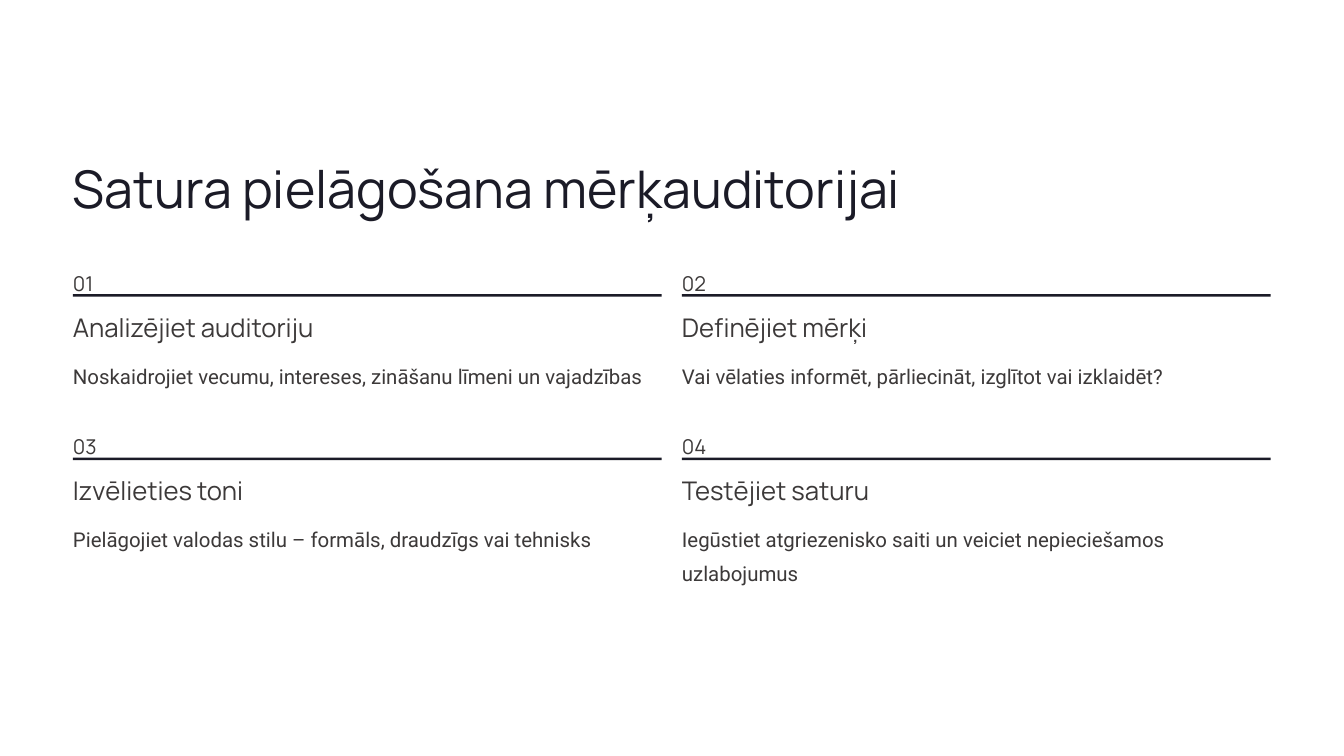
import dataclasses

import pptx
import pptx.dml.color
import pptx.enum.shapes
import pptx.enum.text
import pptx.util

Pt = pptx.util.Pt
RGB = pptx.dml.color.RGBColor


@dataclasses.dataclass(frozen=True)
class Style:
    font: str
    size: float
    line: float
    color: RGB


class Theme:
    paper = RGB(0xFF, 0xFF, 0xFF)
    dark = RGB(0x1B, 0x1B, 0x27)
    gray = RGB(0x3C, 0x39, 0x39)
    title = Style("Manrope", 44.5, 55.5, dark)
    label = Style("Manrope", 17.5, 28.5, gray)
    head = Style("Manrope", 22, 27.5, gray)
    body = Style("Roboto", 17.5, 28.5, gray)


# Grid: two columns, steps apart by a fixed pitch
LEFT, TOP = 62.5, 224.6
WIDE = 504.7
STEP_X, STEP_Y = 522, 140

STEPS = [
    ("Analizējiet auditoriju",
     "Noskaidrojiet vecumu, intereses, zināšanu līmeni un vajadzības"),
    ("Definējiet mērķi",
     "Vai vēlaties informēt, pārliecināt, izglītot vai izklaidēt?"),
    ("Izvēlieties toni",
     "Pielāgojiet valodas stilu – formāls, draudzīgs vai tehnisks"),
    ("Testējiet saturu",
     "Iegūstiet atgriezenisko saiti un veiciet nepieciešamos uzlabojumus"),
]


def place(shape, x, y, w, h):
    shape.left, shape.top, shape.width, shape.height = Pt(x), Pt(y), Pt(w), Pt(h)


def write(shape, text, style, wrap=False):
    frame = shape.text_frame
    frame.margin_left = frame.margin_right = 0
    frame.margin_top = frame.margin_bottom = 0
    frame.auto_size = pptx.enum.text.MSO_AUTO_SIZE.NONE
    frame.vertical_anchor = pptx.enum.text.MSO_ANCHOR.TOP
    frame.word_wrap = wrap
    para = frame.paragraphs[0]
    para.alignment = pptx.enum.text.PP_ALIGN.LEFT
    para.line_spacing = Pt(style.line)
    run = para.add_run()
    run.text = text
    run.font.name = style.font
    run.font.size = Pt(style.size)
    run.font.color.rgb = style.color


def add_title(slide, text):
    title = slide.shapes.title
    place(title, LEFT, 132.5, 711.4, 56.2)
    write(title, text, Theme.title)


def add_text(slide, x, y, w, h, text, style, wrap=False):
    box = slide.shapes.add_textbox(Pt(x), Pt(y), Pt(w), Pt(h))
    write(box, text, style, wrap)


def add_rule(slide, x, y):
    kind = pptx.enum.shapes.MSO_SHAPE.RECTANGLE
    rule = slide.shapes.add_shape(kind, Pt(x), Pt(y), Pt(WIDE), Pt(2.2))
    rule.shadow.inherit = False
    rule.fill.solid()
    rule.fill.fore_color.rgb = Theme.dark
    rule.line.fill.background()


def add_step(slide, index, head, body):
    row, col = divmod(index, 2)
    x, y = LEFT + col * STEP_X, TOP + row * STEP_Y
    add_text(slide, x, y, 18, 22.3, f"{index + 1:02}", Theme.label)
    add_rule(slide, x, y + 27.6)
    add_text(slide, x, y + 41.2, 223.2, 28, head, Theme.head)
    add_text(slide, x, y + 80.1, WIDE, 57, body, Theme.body, wrap=True)


def main():
    deck = pptx.Presentation()
    deck.slide_width, deck.slide_height = Pt(1152), Pt(648)
    slide = deck.slides.add_slide(deck.slide_layouts[5])

    # Paper and title
    slide.background.fill.solid()
    slide.background.fill.fore_color.rgb = Theme.paper
    add_title(slide, "Satura pielāgošana mērķauditorijai")

    # Numbered steps
    for index, (head, body) in enumerate(STEPS):
        add_step(slide, index, head, body)

    deck.save("out.pptx")


if __name__ == "__main__":
    main()
